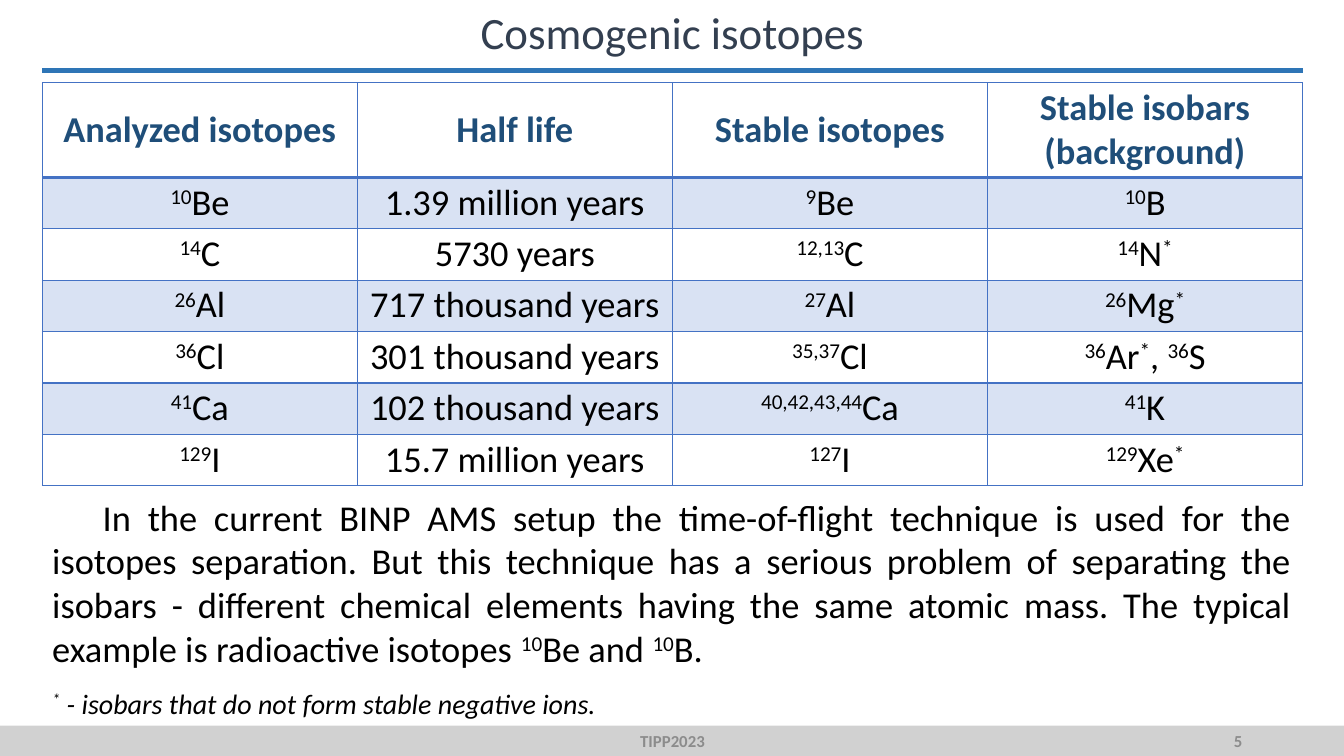
from dataclasses import dataclass

from lxml import etree
from pptx import Presentation
from pptx.dml.color import RGBColor
from pptx.enum.shapes import MSO_CONNECTOR, MSO_SHAPE
from pptx.enum.text import MSO_ANCHOR, MSO_AUTO_SIZE, PP_ALIGN
from pptx.oxml.ns import qn
from pptx.util import Inches, Pt

LEFT, CENTER, RIGHT, JUSTIFY = PP_ALIGN.LEFT, PP_ALIGN.CENTER, PP_ALIGN.RIGHT, PP_ALIGN.JUSTIFY
TOP, MIDDLE = MSO_ANCHOR.TOP, MSO_ANCHOR.MIDDLE
GROW, FIXED = MSO_AUTO_SIZE.SHAPE_TO_FIT_TEXT, MSO_AUTO_SIZE.NONE
RECTANGLE, STRAIGHT = MSO_SHAPE.RECTANGLE, MSO_CONNECTOR.STRAIGHT


@dataclass(frozen=True)
class Style:
    size: int
    color: str
    bold: bool = False
    italic: bool = False


class Theme:
    font = "Calibri"
    title = Style(32, "333F50")
    header = Style(26, "1F4E79", bold=True)
    body = Style(26, "000000")
    note = Style(20, "000000", italic=True)
    footer = Style(12, "8C8C8C", bold=True)
    rule = "2E75B6"
    grid = "4472C4"
    footer_band = "A5A5A5"


MARGIN, CONTENT_WIDTH = 0.42, 12.5
FOOTER_TOP, FOOTER_HEIGHT = 7.2, 0.3
HEADER_HEIGHT, ROW_HEIGHT = 0.94, 0.51

# Text between carets is superscript
HEADERS = ["Analyzed isotopes", "Half life", "Stable isotopes", "Stable isobars\n(background)"]
ISOTOPES = [
    ["^10^Ве", "1.39 million years", "^9^Be", "^10^B"],
    ["^14^C", "5730 years", "^12,13^С", "^14^N^*^"],
    ["^26^Al", "717 thousand years", "^27^Al", "^26^Mg^*^"],
    ["^36^Cl", "301 thousand years", "^35,37^Cl", "^36^Ar^*^, ^36^S"],
    ["^41^Ca", "102 thousand years", "^40,42,43,44^Ca", "^41^K"],
    ["^129^I", "15.7 million years", "^127^I", "^129^Xe^*^"],
]
EXPLANATION = (
    "In the current BINP AMS setup the time-of-flight technique is used for the "
    "isotopes separation. But this technique has a serious problem of separating "
    "the isobars - different chemical elements having the same atomic mass. The "
    "typical example is radioactive isotopes ^10^Be and ^10^B."
)
FOOTNOTE = "^*^ - isobars that do not form stable negative ions."


def write_text(frame, text, style, align, indent=0):
    for index, line in enumerate(text.split("\n")):
        para = frame.paragraphs[0] if index == 0 else frame.add_paragraph()
        para.alignment = align
        if indent:
            properties = para._p.get_or_add_pPr()
            properties.set("marL", "0")
            properties.set("indent", str(Inches(indent)))
        for position, piece in enumerate(line.split("^")):
            if not piece:
                continue
            span = para.add_run()
            span.text = piece
            font = span.font
            font.name, font.size = Theme.font, Pt(style.size)
            font.bold, font.italic = style.bold, style.italic
            font.color.rgb = RGBColor.from_string(style.color)
            if position % 2:
                span._r.get_or_add_rPr().set("baseline", "30000")


def add_text(page, left, top, width, height, text, style, align,
             anchor=TOP, fit=GROW, indent=0):
    box = page.shapes.add_textbox(Inches(left), Inches(top), Inches(width), Inches(height))
    frame = box.text_frame
    frame.word_wrap = True
    frame.auto_size = fit
    frame.vertical_anchor = anchor
    write_text(frame, text, style, align, indent)


def set_solid(fill, color, opacity):
    fill.solid()
    fill.fore_color.rgb = RGBColor.from_string(color)
    color_node = fill._xPr.find(qn("a:solidFill"))[0]
    etree.SubElement(color_node, qn("a:alpha")).set("val", str(opacity * 1000))


def add_footer_band(page, width):
    band = page.shapes.add_shape(
        RECTANGLE, 0, Inches(FOOTER_TOP), width, Inches(FOOTER_HEIGHT))
    band.shadow.inherit = False
    band.line.fill.background()
    set_solid(band.fill, Theme.footer_band, 50)


def add_rule(page, top):
    rule = page.shapes.add_connector(
        STRAIGHT, Inches(MARGIN), Inches(top), Inches(MARGIN + CONTENT_WIDTH), Inches(top))
    rule.line.color.rgb = RGBColor.from_string(Theme.rule)
    rule.line.width = Pt(3)
    etree.SubElement(rule._element.spPr, qn("a:effectLst"))


def set_borders(cell, bottom):
    properties = cell._tc.get_or_add_tcPr()
    for side, points in (("L", 1), ("R", 1), ("T", 1), ("B", bottom)):
        border = etree.SubElement(properties, qn(f"a:ln{side}"), w=str(Pt(points)))
        paint = etree.SubElement(border, qn("a:solidFill"))
        etree.SubElement(paint, qn("a:srgbClr"), val=Theme.grid)


def add_isotope_table(page, top):
    rows = [HEADERS] + ISOTOPES
    height = HEADER_HEIGHT + ROW_HEIGHT * len(ISOTOPES)
    table = page.shapes.add_table(
        len(rows), len(HEADERS), Inches(MARGIN), Inches(top),
        Inches(CONTENT_WIDTH), Inches(height)).table
    for column in table.columns:
        column.width = Inches(CONTENT_WIDTH / len(HEADERS))
    for row_index, texts in enumerate(rows):
        is_header = row_index == 0
        table.rows[row_index].height = Inches(HEADER_HEIGHT if is_header else ROW_HEIGHT)
        for column_index, text in enumerate(texts):
            cell = table.cell(row_index, column_index)
            cell.margin_left = cell.margin_right = Inches(0.07)
            cell.margin_top = cell.margin_bottom = Inches(0.03)
            cell.vertical_anchor = MIDDLE if is_header else TOP
            set_borders(cell, bottom=2 if is_header else 1)
            if row_index % 2:
                set_solid(cell.fill, Theme.grid, 20)
            else:
                cell.fill.background()
            write_text(cell.text_frame, text, Theme.header if is_header else Theme.body, CENTER)


def main():
    deck = Presentation()
    deck.slide_width, deck.slide_height = Inches(13.33), Inches(7.5)
    page = deck.slides.add_slide(deck.slide_layouts[6])

    # Title
    add_footer_band(page, deck.slide_width)
    add_text(page, MARGIN, 0, CONTENT_WIDTH, 0.64, "Cosmogenic isotopes", Theme.title, CENTER)
    add_rule(page, 0.7)

    # Isotopes and their explanation
    add_isotope_table(page, 0.82)
    add_text(page, MARGIN, 4.86, CONTENT_WIDTH, 1.85, EXPLANATION, Theme.body, JUSTIFY, indent=0.5)
    add_text(page, MARGIN, 6.76, CONTENT_WIDTH, 0.44, FOOTNOTE, Theme.note, LEFT)

    # Footer
    for left, width, text, align in ((4.42, 4.5, "TIPP2023", CENTER), (9.42, 3, "5", RIGHT)):
        add_text(page, left, FOOTER_TOP, width, FOOTER_HEIGHT, text,
                 Theme.footer, align, anchor=MIDDLE, fit=FIXED)

    deck.save("out.pptx")


if __name__ == "__main__":
    main()
